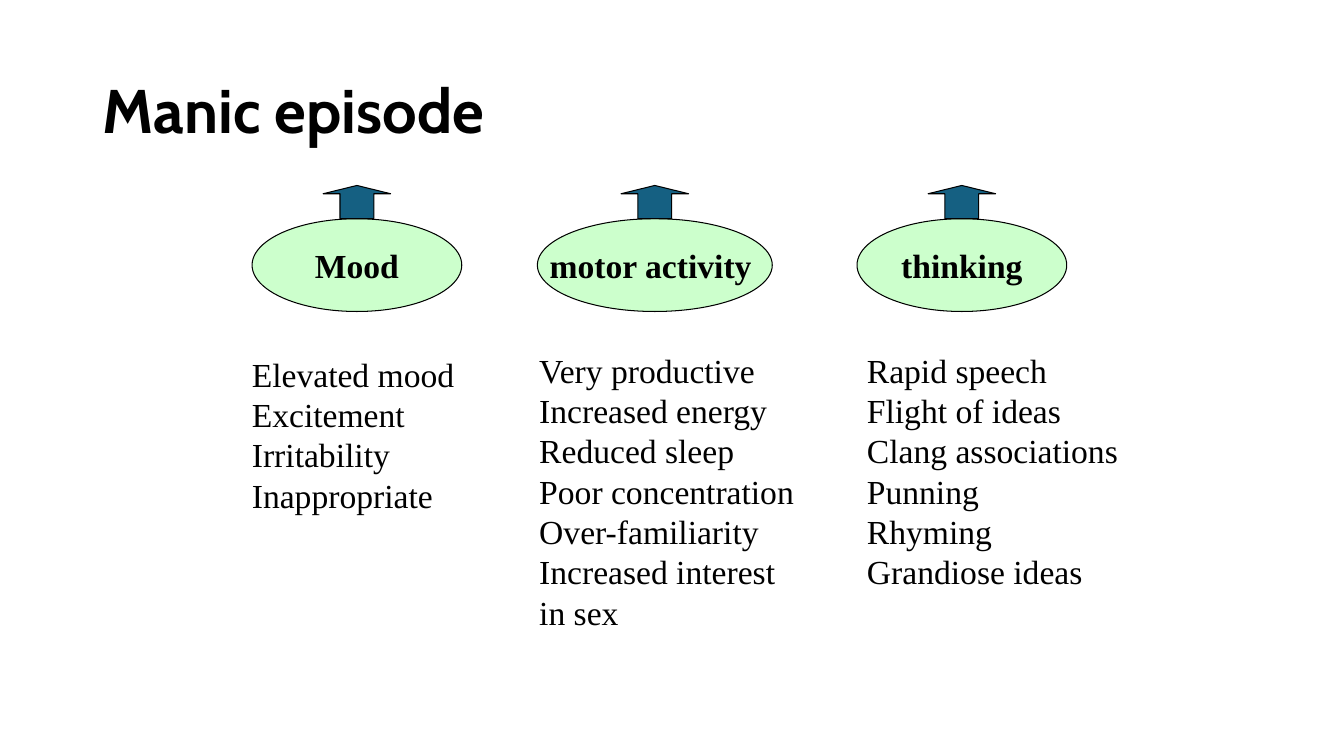
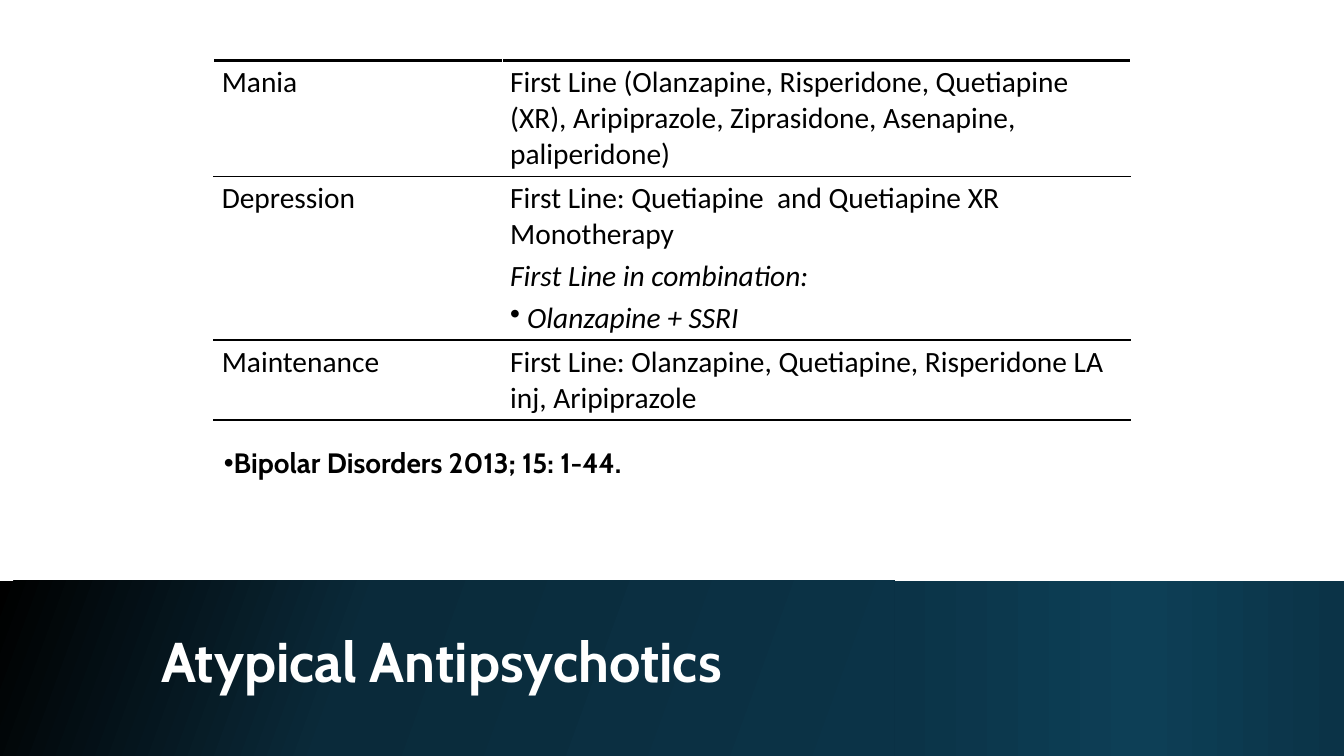
from lxml import etree
from pptx import Presentation
from pptx.dml.color import RGBColor
from pptx.enum.shapes import MSO_SHAPE as SHAPE
from pptx.enum.text import MSO_ANCHOR as ANCHOR, MSO_AUTO_SIZE as AUTO, PP_ALIGN as ALIGN
from pptx.oxml import parse_xml
from pptx.oxml.ns import nsdecls, qn
from pptx.util import Inches, Pt

W, H = 13.33, 7.5
BLACK = RGBColor(0x00, 0x00, 0x00)
WHITE = RGBColor(0xFF, 0xFF, 0xFF)
GREEN = RGBColor(0xCC, 0xFF, 0xCC)
TEAL = RGBColor(0x15, 0x60, 0x82)
DEEP = RGBColor(0x0A, 0x2A, 0x3A)
NAVY = RGBColor(0x0B, 0x33, 0x47)
OCEAN = RGBColor(0x0D, 0x3F, 0x56)

TITLE = dict(name="Cabin", size=Pt(44), bold=True)
SOURCE = dict(name="Cabin", size=Pt(20), bold=True)
LABEL = dict(name="Times New Roman", size=Pt(24), bold=True)
LIST = dict(name="Times New Roman", size=Pt(24), bold=False)
CELL = dict(name="Calibri", size=Pt(21), bold=False)

SYMPTOMS = [
    ((2.5, 2.08), "Mood", (2.4, 3.46),
     ["Elevated mood", "Excitement", "Irritability", "Inappropriate"]),
    ((5.33, 2.33), "motor activity ", (5.25, 3.42),
     ["Very productive", "Increased energy", "Reduced sleep", "Poor concentration",
      "Over-familiarity", "Increased interest in sex"]),
    ((8.5, 2.08), "thinking", (8.5, 3.42),
     ["Rapid speech", "Flight of ideas", "Clang associations", "Punning", "Rhyming",
      "Grandiose ideas"]),
]
TREATMENTS = [
    ("Mania", ["First Line (Olanzapine, Risperidone, Quetiapine (XR), Aripiprazole, "
               "Ziprasidone, Asenapine, paliperidone)"]),
    ("Depression", ["First Line: Quetiapine  and Quetiapine XR Monotherapy",
                    "First Line in combination:", " Olanzapine + SSRI"]),
    ("Maintenance", ["First Line: Olanzapine, Quetiapine, Risperidone LA inj, Aripiprazole"]),
]


def set_attrs(obj, **values):
    for key, value in values.items():
        setattr(obj, key, value)


def place(sp, box):
    set_attrs(sp, **dict(zip(("left", "top", "width", "height"), map(Inches, box))))


def write(tf, lines, font, color=BLACK, align=ALIGN.LEFT, **layout):
    for i, line in enumerate(lines):
        p = tf.paragraphs[0] if i == 0 else tf.add_paragraph()
        set_attrs(p, alignment=align, **layout)
        r = p.add_run()
        r.text = line
        set_attrs(r.font, **font)
        r.font.color.rgb = color


def add_title(s, text, box, color=BLACK, size=44):
    place(s.shapes.title, box)
    tf = s.shapes.title.text_frame
    set_attrs(tf, auto_size=AUTO.NONE, vertical_anchor=ANCHOR.MIDDLE, word_wrap=True)
    write(tf, [text], TITLE | {"size": Pt(size)}, color, line_spacing=0.9)


def add_preset(s, kind, box, fill=None):
    sp = s.shapes.add_shape(kind, *map(Inches, box))
    sp.shadow.inherit = False
    if fill is None:
        sp.line.fill.background()
    else:
        sp.fill.solid()
        sp.fill.fore_color.rgb = fill
        sp.line.color.rgb = BLACK
        sp.line.width = Pt(0.75)
    return sp


def add_symptom(s, oval, label, corner, items):
    left, width = oval
    top, height, arrow_w, arrow_h = 2.17, 0.92, 0.67, 0.33
    sp = add_preset(s, SHAPE.OVAL, (left, top, width, height), GREEN)
    set_attrs(sp.text_frame, word_wrap=False, vertical_anchor=ANCHOR.MIDDLE)
    write(sp.text_frame, [label], LABEL, align=ALIGN.CENTER)
    arrow = add_preset(s, SHAPE.UP_ARROW, (left + (width - arrow_w) / 2, top - arrow_h,
                                           arrow_w, arrow_h), TEAL)
    arrow.adjustments[0], arrow.adjustments[1] = 0.5, 0.25
    tb = s.shapes.add_textbox(*map(Inches, (*corner, 2.8, 0.1 + 0.4 * len(items))))
    tb.text_frame.word_wrap = True
    write(tb.text_frame, items, LIST)


def fill_gradient(sp, stops, angle):
    sp.fill.gradient()
    sp.fill.gradient_angle = angle
    gs_lst = sp.fill.gradient_stops[0].color and sp._element.spPr.find(
        qn("a:gradFill")).find(qn("a:gsLst"))
    for gs in list(gs_lst):
        gs_lst.remove(gs)
    for pos, color in stops:
        gs = etree.SubElement(gs_lst, qn("a:gs"), pos=str(pos * 1000))
        etree.SubElement(gs, qn("a:srgbClr"), val=str(color))


def add_band(s, top):
    split = 8.87
    for left, width, stops, angle in (
            (0, split, [(0, BLACK), (40, DEEP), (100, NAVY)], 340),
            (split, W - split, [(0, NAVY), (55, OCEAN), (100, NAVY)], 0)):
        fill_gradient(add_preset(s, SHAPE.RECTANGLE, (left, top, width, H - top)), stops, angle)


def add_bullet(p):
    p._p.get_or_add_pPr().append(parse_xml(f'<a:buChar {nsdecls("a")} char="•"/>'))


def rule_cell(cell, top, bottom):
    tcPr = cell._tc.get_or_add_tcPr()
    for i, (side, width) in enumerate((("lnT", top), ("lnB", bottom))):
        tcPr.insert(i, parse_xml(
            f'<a:{side} {nsdecls("a")} w="{Pt(width)}"><a:solidFill>'
            f'<a:srgbClr val="{BLACK}"/></a:solidFill></a:{side}>'))


def add_treatments(s, left, top, cols, rows):
    table = s.shapes.add_table(len(rows), len(cols), *map(
        Inches, (left, top, sum(cols), sum(rows)))).table
    set_attrs(table, first_row=False, horz_banding=False)
    for col, width in zip(table.columns, cols):
        col.width = Inches(width)
    rules = [2.25] + [1] * (len(rows) - 1) + [2.25]
    for i, (name, lines) in enumerate(TREATMENTS):
        table.rows[i].height = Inches(rows[i])
        for cell, texts in zip(table.rows[i].cells, ([name], lines)):
            set_attrs(cell, margin_left=Inches(0.08), margin_right=Inches(0.08),
                      margin_top=Inches(0.04), margin_bottom=Inches(0.04))
            write(cell.text_frame, texts, CELL)
            for p in cell.text_frame.paragraphs[1:]:
                p.space_before = Pt(4.2)
                p.runs[0].font.italic = True
            if len(texts) > 1:
                add_bullet(cell.text_frame.paragraphs[-1])
            cell.fill.solid()
            cell.fill.fore_color.rgb = WHITE
            rule_cell(cell, rules[i], rules[i + 1])


def add_source(s, text, box):
    sp = s.placeholders[1]
    place(sp, box)
    tf = sp.text_frame
    set_attrs(tf, auto_size=AUTO.NONE, vertical_anchor=ANCHOR.MIDDLE, word_wrap=True)
    write(tf, [text], SOURCE, line_spacing=0.9, space_before=Pt(0))
    p = tf.paragraphs[0]
    pPr = p._p.get_or_add_pPr()
    pPr.set("marL", "0")
    pPr.set("indent", str(-Inches(0.25)))
    add_bullet(p)


def build_episode(prs):
    s = prs.slides.add_slide(prs.slide_layouts[5])
    add_title(s, "Manic episode", (0.92, 0.4, 11.5, 1.45))
    for symptom in SYMPTOMS:
        add_symptom(s, *symptom)


def build_antipsychotics(prs):
    s = prs.slides.add_slide(prs.slide_layouts[1])
    add_band(s, 5.76)
    add_title(s, "Atypical Antipsychotics", (1.5, 6.03, 10.82, 1.13), WHITE, 40)
    tree = s.shapes._spTree
    tree.append(s.shapes.title._element)
    add_source(s, "Bipolar Disorders 2013; 15: 1-44.", (2.12, 4.19, 9.11, 0.84))
    add_treatments(s, 2.12, 0.6, (2.86, 6.23), (1.15, 1.62, 0.79))


def main():
    prs = Presentation()
    set_attrs(prs, slide_width=Inches(W), slide_height=Inches(H))
    build_episode(prs)
    build_antipsychotics(prs)
    prs.save("out.pptx")


if __name__ == "__main__":
    main()
